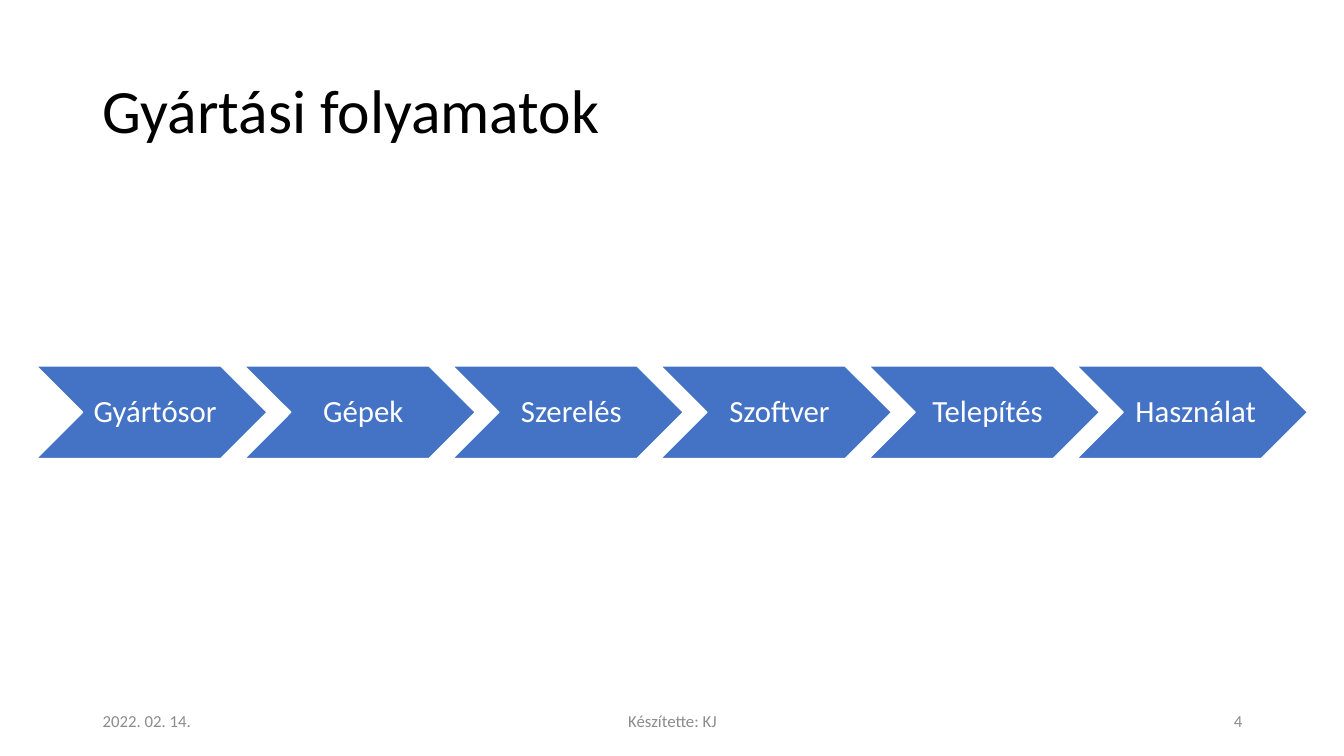
from dataclasses import dataclass

from pptx import Presentation
from pptx.dml.color import RGBColor
from pptx.enum.shapes import MSO_SHAPE
from pptx.enum.text import MSO_ANCHOR, PP_ALIGN
from pptx.util import Inches, Pt


@dataclass(frozen=True)
class Theme:
    font: str = "Calibri"
    ink: RGBColor = RGBColor(0x00, 0x00, 0x00)
    muted: RGBColor = RGBColor(0x8C, 0x8C, 0x8C)
    accent: RGBColor = RGBColor(0x44, 0x72, 0xC4)
    paper: RGBColor = RGBColor(0xFF, 0xFF, 0xFF)
    title_size: Pt = Pt(44)
    step_size: Pt = Pt(22)
    footer_size: Pt = Pt(12)
    outline: Pt = Pt(1)


THEME = Theme()
STEPS = ["Gyártósor", "Gépek", "Szerelés", "Szoftver", "Telepítés", "Használat"]
FOOTERS = [
    ("2022. 02. 14.", 0.92, 3, PP_ALIGN.LEFT),
    ("Készítette: KJ", 4.42, 4.5, PP_ALIGN.CENTER),
    ("4", 9.42, 3, PP_ALIGN.RIGHT),
]
STEP_LEFT, STEP_TOP, STEP_WIDTH, STEP_HEIGHT = 0.36, 3.63, 2.29, 0.92
STEP_PITCH = (10.68 - STEP_LEFT) / (len(STEPS) - 1)


def apply_format(target, values):
    for name, value in values.items():
        setattr(target, name, value)


def write_text(box, text, size, color, align, spacing=1.0, **frame_format):
    frame = box.text_frame
    apply_format(frame, {"vertical_anchor": MSO_ANCHOR.MIDDLE, "word_wrap": True, **frame_format})
    para = frame.paragraphs[0]
    apply_format(para, {"alignment": align, "line_spacing": spacing})
    span = para.add_run()
    span.text = text
    apply_format(span.font, {"name": THEME.font, "size": size})
    span.font.color.rgb = color


def add_label(page, place, text, size, color, align, spacing=1.0):
    box = page.shapes.add_textbox(*map(Inches, place))
    write_text(box, text, size, color, align, spacing)


def add_step(page, left, text):
    place = (left, STEP_TOP, STEP_WIDTH, STEP_HEIGHT)
    chevron = page.shapes.add_shape(MSO_SHAPE.CHEVRON, *map(Inches, place))
    chevron.shadow.inherit = False
    chevron.fill.solid()
    chevron.fill.fore_color.rgb = THEME.accent
    chevron.line.color.rgb = THEME.paper
    chevron.line.width = THEME.outline
    inset = Inches(0.03)
    write_text(chevron, text, THEME.step_size, THEME.paper, PP_ALIGN.CENTER, 0.9,
               word_wrap=False, margin_left=Inches(0.1), margin_right=inset,
               margin_top=inset, margin_bottom=inset)


def main():
    deck = Presentation()
    apply_format(deck, {"slide_width": Inches(13.33), "slide_height": Inches(7.5)})
    page = deck.slides.add_slide(deck.slide_layouts[6])
    add_label(page, (0.92, 0.4, 11.5, 1.45), "Gyártási folyamatok",
              THEME.title_size, THEME.ink, PP_ALIGN.LEFT, 0.9)
    for text, left, width, align in FOOTERS:
        add_label(page, (left, 6.95, width, 0.4), text, THEME.footer_size, THEME.muted, align)
    for index, text in enumerate(STEPS):
        add_step(page, STEP_LEFT + index * STEP_PITCH, text)
    deck.save("out.pptx")


if __name__ == "__main__":
    main()
